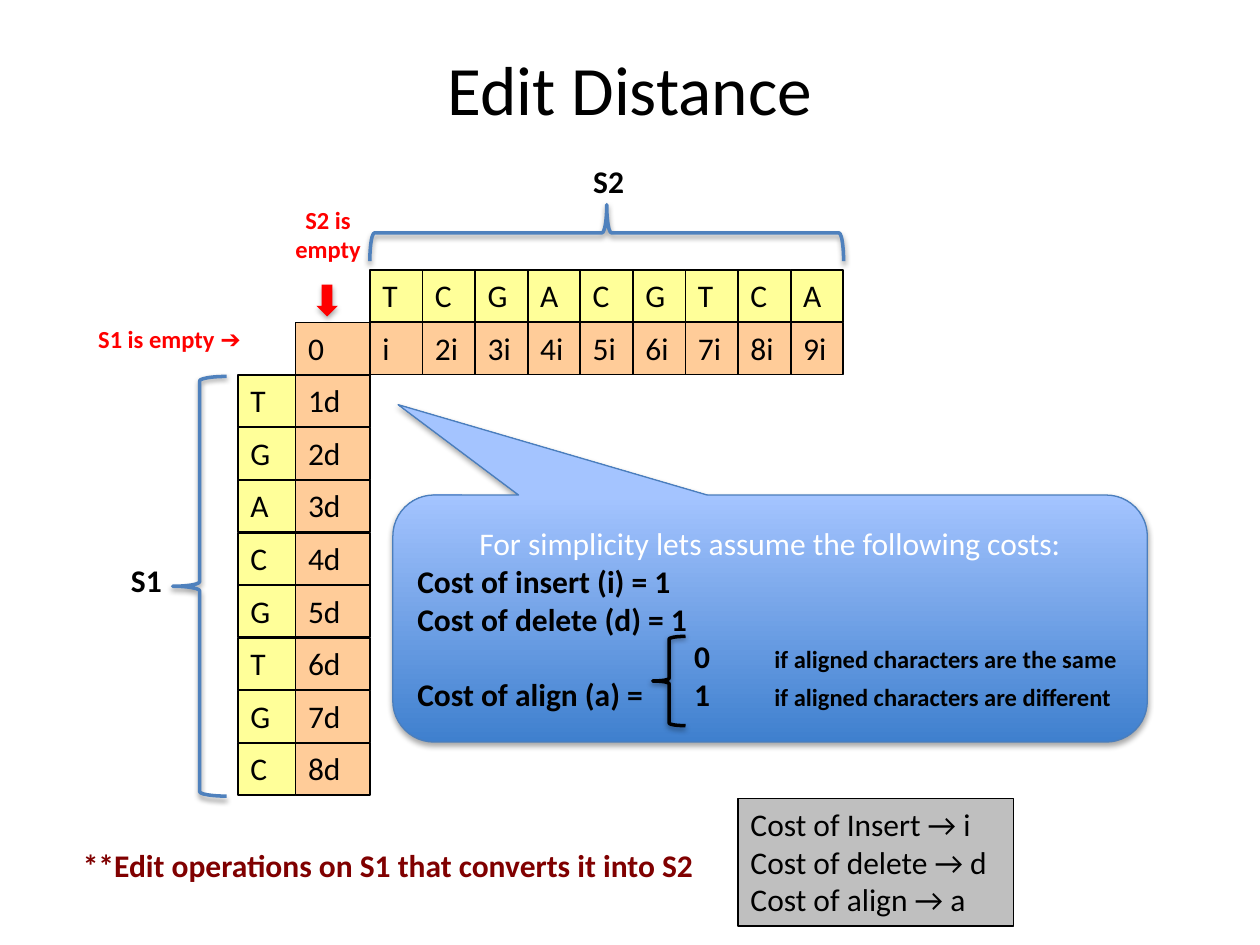
from lxml.etree import SubElement
from pptx import Presentation
from pptx.dml.color import RGBColor
from pptx.enum.shapes import MSO_SHAPE
from pptx.enum.text import MSO_ANCHOR, PP_ALIGN
from pptx.oxml.ns import qn
from pptx.util import Cm, Pt

BLACK, WHITE, RED, MAROON = "000000", "FFFFFF", "FF0000", "800000"
YELLOW, ORANGE, GREY, BLUE = "FFFF99", "FFCC99", "BFBFBF", "4F81BD"


def color(value):
    return RGBColor.from_string(value)


class Board:
    """Holds the style and the current slide, with a method per kind of element."""

    font = "Calibri"
    size = 18

    def __init__(self, page):
        self.page = page

    def title(self, text, left, top, width, height):
        box = self.page.shapes.title
        box.left, box.top, box.width, box.height = map(Cm, (left, top, width, height))
        box.text_frame.vertical_anchor = MSO_ANCHOR.MIDDLE
        self.span(box.text_frame.paragraphs[0], text, 39.6)
        box.text_frame.paragraphs[0].alignment = PP_ALIGN.CENTER

    def span(self, para, text, size=None, ink=BLACK, bold=False):
        run = para.add_run()
        run.text = text
        run.font.name = self.font
        run.font.size = Pt(size or self.size)
        run.font.bold = bold
        run.font.color.rgb = color(ink)

    def lines(self, box, texts, align=PP_ALIGN.LEFT, wrap=False, **style):
        frame = box.text_frame
        frame.word_wrap = wrap
        frame.vertical_anchor = MSO_ANCHOR.TOP
        for index, text in enumerate(texts):
            para = frame.add_paragraph() if index else frame.paragraphs[0]
            para.alignment = align
            self.span(para, text, **style)
        return frame

    def label(self, texts, left, top, width, height, align=PP_ALIGN.LEFT, **style):
        box = self.page.shapes.add_textbox(Cm(left), Cm(top), Cm(width), Cm(height))
        self.lines(box, texts, align, bold=True, **style)

    def shape(self, kind, left, top, width, height, fill=None, line=None, weight=1):
        box = self.page.shapes.add_shape(kind, Cm(left), Cm(top), Cm(width), Cm(height))
        box.shadow.inherit = False
        if fill:
            box.fill.solid()
            box.fill.fore_color.rgb = color(fill)
        else:
            box.fill.background()
        if line:
            box.line.color.rgb = color(line)
            box.line.width = Pt(weight)
        else:
            box.line.fill.background()
        return box

    def cell(self, text, left, top, width, fill):
        box = self.shape(MSO_SHAPE.RECTANGLE, left, top, width, 1.05, fill, BLACK)
        self.lines(box, [text], wrap=True)

    def shadow(self, box, opacity=35, distance=1.8):
        effects = box._element.spPr.find(qn("a:effectLst"))
        outer = SubElement(effects, qn("a:outerShdw"), blurRad=str(Pt(3.1)),
                           dist=str(Pt(distance)), dir="5400000", rotWithShape="0")
        tint = SubElement(outer, qn("a:srgbClr"), val=BLACK)
        SubElement(tint, qn("a:alpha"), val=str(opacity * 1000))

    def brace(self, left, top, width, height, line=BLUE, rotation=0):
        box = self.shape(MSO_SHAPE.LEFT_BRACE, left, top, width, height, None, line, 2)
        box.rotation = rotation
        self.shadow(box, 38, 1.6)

    def callout(self, left, top, width, height):
        box = self.shape(MSO_SHAPE.ROUNDED_RECTANGULAR_CALLOUT, left, top, width, height,
                         None, "4B7EBC", 0.75)
        for index, value in enumerate((-0.493, -0.866, 0.167)):
            box.adjustments[index] = value
        box.fill.gradient()
        box.fill.gradient_angle = 90
        for stop, shade in zip(box.fill.gradient_stops, ("3F80CE", "A4C4FF")):
            stop.color.rgb = color(shade)
        self.shadow(box)
        return box

    def tabs(self, para, *stops):
        tab_list = SubElement(para._p.get_or_add_pPr(), qn("a:tabLst"))
        for stop in stops:
            SubElement(tab_list, qn("a:tab"), pos=str(Cm(stop)), algn="l")


def draw_matrix(board):
    left, top, pitch = 4.8, 5.44, 1.06
    letter_width, edge_width = 1.16, 1.5
    edge = left + letter_width
    first = edge + edge_width
    for index, letter in enumerate("TCGACGTCA"):
        place = first + index * pitch
        board.cell(letter, place, top, pitch, YELLOW)
        board.cell(f"{index + 1}i" if index else "i", place, top + pitch, pitch, ORANGE)
    board.cell("0", edge, top + pitch, edge_width, ORANGE)
    for index, letter in enumerate("TGACGTGC"):
        place = top + (index + 2) * pitch
        board.cell(letter, left, place, letter_width, YELLOW)
        board.cell(f"{index + 1}d", edge, place, edge_width, ORANGE)


def draw_labels(board):
    board.brace(3.48, 7.59, 1.09, 8.46)
    board.label(["S1"], 2.39, 11.18, 1.24, 1.02)
    board.brace(11.66, -0.08, 1.14, 9.55, rotation=90)
    board.label(["S2"], 11.71, 3.15, 1.14, 1.02)
    board.label(["**Edit operations on S1 that converts it into S2"],
                1.42, 16.94, 13, 1.02, ink=MAROON)
    legend = board.shape(MSO_SHAPE.RECTANGLE, 14.88, 16.1, 5.56, 2.57, GREY, BLACK, 0.75)
    board.lines(legend, ["Cost of Insert → i", "Cost of delete → d", "Cost of align → a"])
    board.label(["S1 is empty ➔"], 1.73, 6.4, 3.53, 0.86, size=14, ink=RED)
    board.label(["S2 is", "empty"], 5.69, 4.01, 1.85, 1.45, PP_ALIGN.CENTER,
                size=14, ink=RED)
    arrow = board.shape(MSO_SHAPE.DOWN_ARROW, 6.38, 5.74, 0.43, 0.64, RED)
    board.shadow(arrow)


def draw_costs(board):
    box = board.callout(7.92, 9.98, 15.21, 4.98)
    frame = board.lines(box, ["For simplicity lets assume the following costs:"],
                        PP_ALIGN.CENTER, wrap=True, ink=WHITE)
    frame.vertical_anchor = MSO_ANCHOR.MIDDLE
    rows = (("Cost of insert (i) = 1", ""),
            ("Cost of delete (d) = 1", ""),
            ("\t0\t", "if aligned characters are the same"),
            ("Cost of align (a) =\t1\t", "if aligned characters are different"))
    for cost, condition in rows:
        para = frame.add_paragraph()
        para.alignment = PP_ALIGN.LEFT
        board.span(para, cost, bold=True)
        if condition:
            board.tabs(para, 5.58, 7.2)
            board.span(para, condition, 14, bold=True)
    board.brace(13.16, 12.83, 0.66, 1.8, BLACK)


def main():
    deck = Presentation()
    deck.slide_width, deck.slide_height = Cm(25.4), Cm(19.05)
    board = Board(deck.slides.add_slide(deck.slide_layouts[5]))
    board.title("Edit Distance", 1.27, 0.76, 22.86, 2.01)
    draw_matrix(board)
    draw_labels(board)
    draw_costs(board)
    deck.save("out.pptx")


if __name__ == "__main__":
    main()
